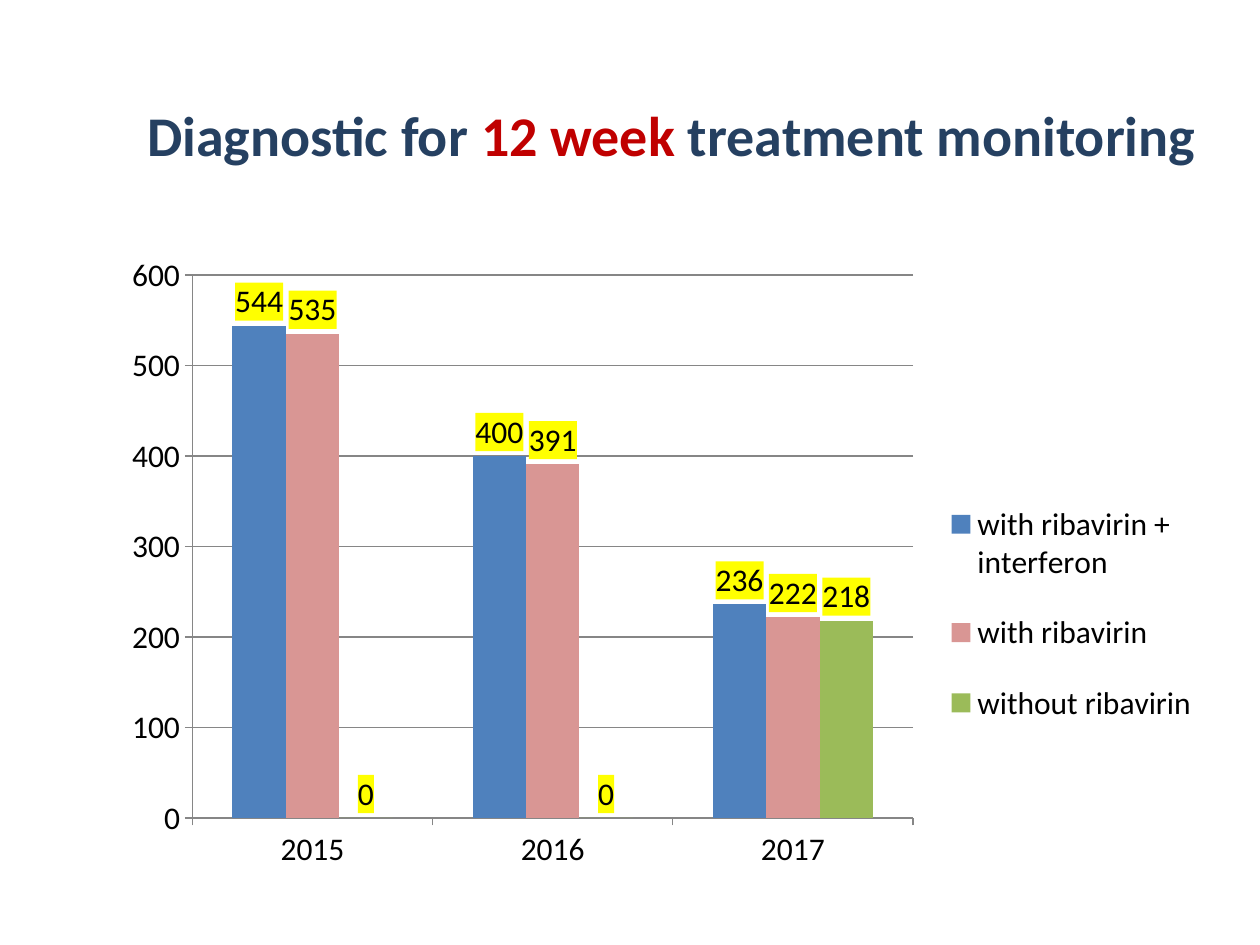
"""Build a slide with a clustered column chart of diagnostic costs by year."""
from lxml.etree import fromstring
from pptx import Presentation
from pptx.chart.data import CategoryChartData
from pptx.dml.color import RGBColor
from pptx.enum.chart import XL_CHART_TYPE, XL_LABEL_POSITION, XL_LEGEND_POSITION, XL_TICK_MARK
from pptx.enum.text import MSO_ANCHOR, PP_ALIGN
from pptx.oxml.ns import nsdecls, qn
from pptx.util import Pt

COLORS = {
    "navy": "254061",
    "red": "C00000",
    "black": "000000",
    "axis": "868686",
    "label": "FFFF00",
    "blue": "4F81BD",
    "pink": "D99694",
    "green": "9BBB59",
}
FONT = "Calibri"
SERIES = [
    ("with ribavirin + interferon ", (544, 400, 236), "blue"),
    ("with ribavirin", (535, 391, 222), "pink"),
    ("without ribavirin", (0, 0, 218), "green"),
]


def px(*lengths):
    return [round(length * 914400 / 126) for length in lengths]


def layout_xml(target, **fractions):
    values = "".join(f'<c:{key} val="{value}"/>' for key, value in fractions.items())
    inner = f'<c:layoutTarget val="{target}"/>' if target else ""
    return fromstring(
        f'<c:layout {nsdecls("c")}><c:manualLayout>{inner}'
        f'<c:xMode val="edge"/><c:yMode val="edge"/>{values}</c:manualLayout></c:layout>'
    )


presentation = Presentation()
presentation.slide_width, presentation.slide_height = px(1260, 945)
slide = presentation.slides.add_slide(presentation.slide_layouts[5])

title = slide.shapes.title
title.left, title.top, title.width, title.height = px(116, 23, 1124, 222)
title.text_frame.vertical_anchor = MSO_ANCHOR.MIDDLE
title.text_frame.word_wrap = True
paragraph = title.text_frame.paragraphs[0]
paragraph.alignment = PP_ALIGN.CENTER
for text, color in [
    ("Diagnostic for ", "navy"),
    ("12 week ", "red"),
    ("treatment monitoring ", "navy"),
]:
    run = paragraph.add_run()
    run.text = text
    for name, value in {"size": Pt(32), "bold": True, "name": FONT}.items():
        setattr(run.font, name, value)
    run.font.color.rgb = RGBColor.from_string(COLORS[color])

chart_data = CategoryChartData()
chart_data.categories = ["2015", "2016", "2017"]
for name, values, color in SERIES:
    chart_data.add_series(name, values)
chart = slide.shapes.add_chart(
    XL_CHART_TYPE.COLUMN_CLUSTERED, *px(116, 243, 1092, 639), chart_data
).chart
chart.has_title = False
chart.font.name = FONT
chart.font.size = Pt(18)
chart.font.color.rgb = RGBColor.from_string(COLORS["black"])

plot = chart.plots[0]
plot.gap_width = 150
plot.overlap = 0
plot.vary_by_categories = False
for series, (name, values, color) in zip(plot.series, SERIES):
    series.format.fill.solid()
    series.format.fill.fore_color.rgb = RGBColor.from_string(COLORS[color])
    labels = series.data_labels
    labels.show_value = True
    labels.position = XL_LABEL_POSITION.OUTSIDE_END
    series._element.find(qn("c:dLbls")).insert(0, fromstring(
        f'<c:spPr {nsdecls("c", "a")}><a:solidFill>'
        f'<a:srgbClr val="{COLORS["label"]}"/></a:solidFill></c:spPr>'
    ))

value_axis = chart.value_axis
value_axis.minimum_scale = 0
value_axis.maximum_scale = 600
value_axis.major_unit = 100
value_axis.has_major_gridlines = True
for axis in (chart.category_axis, value_axis):
    axis.major_tick_mark = XL_TICK_MARK.OUTSIDE
    axis.minor_tick_mark = XL_TICK_MARK.NONE
for lined in (chart.category_axis, value_axis, value_axis.major_gridlines):
    lined.format.line.width = Pt(0.75)
    lined.format.line.color.rgb = RGBColor.from_string(COLORS["axis"])

chart.has_legend = True
legend = chart.legend
legend.position = XL_LEGEND_POSITION.RIGHT
legend.include_in_layout = False
for old_layout in legend._element.findall(qn("c:layout")):
    legend._element.remove(old_layout)
legend._element.find(qn("c:legendPos")).addnext(
    layout_xml("", x=0.75, y=0.36, w=0.25, h=0.44)
)
plot_area = chart._chartSpace.chart.plotArea
for old_layout in plot_area.findall(qn("c:layout")):
    plot_area.remove(old_layout)
plot_area.insert(0, layout_xml("inner", x=0.07, y=0.05, w=0.66, h=0.85))

presentation.save("out.pptx")
